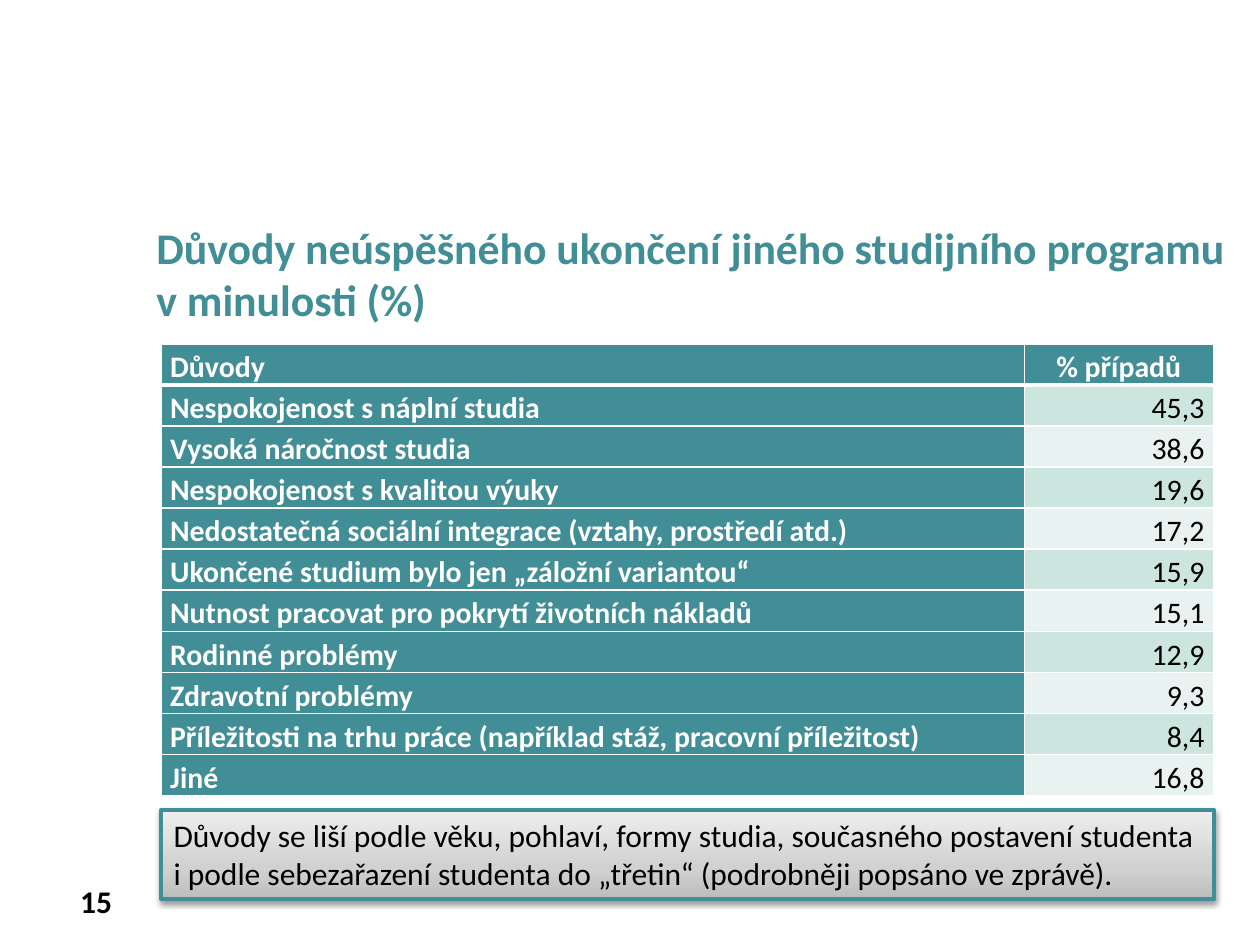
from dataclasses import dataclass

from lxml import etree
from pptx import Presentation
from pptx.dml.color import RGBColor
from pptx.enum.shapes import MSO_SHAPE
from pptx.enum.text import MSO_ANCHOR, MSO_AUTO_SIZE, PP_ALIGN
from pptx.oxml.ns import qn
from pptx.util import Cm, Pt

LEFT, CENTER, RIGHT = PP_ALIGN.LEFT, PP_ALIGN.CENTER, PP_ALIGN.RIGHT
TOP, MIDDLE = MSO_ANCHOR.TOP, MSO_ANCHOR.MIDDLE
FONT = "Calibri"
TEAL, WHITE, BLACK = "418E96", "FFFFFF", "000000"
BANDS = ("CDE5DF", "E8F2F0")
NOTE_GRADIENT = ((0, "BDBDBD"), (35, "D1D1D1"), (100, "EEEEEE"))
TITLE_ONLY_LAYOUT = 5
ROW_HEIGHT = Cm(0.82)


@dataclass
class Reason:
    label: str
    share: str


REASONS = [
    Reason("Nespokojenost s náplní studia", "45,3"),
    Reason("Vysoká náročnost studia", "38,6"),
    Reason("Nespokojenost s kvalitou výuky", "19,6"),
    Reason("Nedostatečná sociální integrace (vztahy, prostředí atd.)", "17,2"),
    Reason("Ukončené studium bylo jen „záložní variantou“", "15,9"),
    Reason("Nutnost pracovat pro pokrytí životních nákladů", "15,1"),
    Reason("Rodinné problémy", "12,9"),
    Reason("Zdravotní problémy", "9,3"),
    Reason("Příležitosti na trhu práce (například stáž, pracovní příležitost)", "8,4"),
    Reason("Jiné", "16,8"),
]


def color(value: str) -> RGBColor:
    return RGBColor.from_string(value)


def add_element(parent, tag: str, **attributes):
    return etree.SubElement(parent, qn(tag), {key: str(value) for key, value in attributes.items()})


def write_text(text_frame, text: str, size: float, text_color: str, bold: bool = False,
               alignment=LEFT, anchor=TOP):
    text_frame.word_wrap = True
    text_frame.vertical_anchor = anchor
    text_frame.text = text
    paragraph = text_frame.paragraphs[0]
    paragraph.alignment = alignment
    paragraph.font.name = FONT
    paragraph.font.size = Pt(size)
    paragraph.font.bold = bold
    paragraph.font.color.rgb = color(text_color)
    return paragraph


def set_borders(cell, top: float = 1, bottom: float = 1) -> None:
    properties = cell._tc.get_or_add_tcPr()
    for side, width in (("L", 1), ("R", 1), ("T", top), ("B", bottom)):
        line = add_element(properties, f"a:ln{side}", w=Pt(width))
        add_element(add_element(line, "a:solidFill"), "a:srgbClr", val=WHITE)


def fill_cell(cell, text: str, fill: str, text_color: str, bold: bool, alignment,
              anchor=MIDDLE, top: float = 1, bottom: float = 1):
    set_borders(cell, top, bottom)
    cell.fill.solid()
    cell.fill.fore_color.rgb = color(fill)
    cell.margin_left = cell.margin_right = Cm(0.18)
    cell.margin_top = cell.margin_bottom = 0
    paragraph = write_text(cell.text_frame, text, 17, text_color, bold, alignment)
    cell.vertical_anchor = anchor
    paragraph.line_spacing = 1.15
    return paragraph


def add_title(slide) -> None:
    title = slide.shapes.title
    title.left, title.top, title.width, title.height = Cm(2.9), Cm(4.32), Cm(22.3), Cm(1.4)
    write_text(title.text_frame,
               "Důvody neúspěšného ukončení jiného studijního programu v minulosti (%)",
               25, TEAL, bold=True)
    title.text_frame.auto_size = MSO_AUTO_SIZE.NONE


def add_reason_table(slide) -> None:
    row_count = len(REASONS) + 1
    table = slide.shapes.add_table(row_count, 2, Cm(3.25), Cm(6.93),
                                   Cm(21.21), ROW_HEIGHT * row_count).table
    table.columns[0].width, table.columns[1].width = Cm(17.4), Cm(3.81)
    for row in table.rows:
        row.height = ROW_HEIGHT

    # Header row
    headers = (("Důvody", LEFT, MIDDLE), ("% případů", CENTER, TOP))
    for column, (text, alignment, anchor) in enumerate(headers):
        paragraph = fill_cell(table.cell(0, column), text, TEAL, WHITE, True, alignment,
                              anchor, bottom=3)
        paragraph.space_after = Pt(2)

    # Reasons with alternating value shades
    for index, reason in enumerate(REASONS):
        top = 3 if index == 0 else 1
        fill_cell(table.cell(index + 1, 0), reason.label, TEAL, WHITE, True, LEFT, top=top)
        fill_cell(table.cell(index + 1, 1), reason.share, BANDS[index % 2], BLACK, False,
                  RIGHT, top=top)


def add_note(slide) -> None:
    note = slide.shapes.add_shape(MSO_SHAPE.RECTANGLE, Cm(3.25), Cm(16.33), Cm(21.23), Cm(1.8))
    note.line.color.rgb = color(TEAL)
    note.line.width = Pt(2.25)
    write_text(note.text_frame,
               "Důvody se liší podle věku, pohlaví, formy studia, současného postavení studenta "
               "i podle sebezařazení studenta do „třetin“ (podrobněji popsáno ve zprávě).",
               18, BLACK)
    note.text_frame.auto_size = MSO_AUTO_SIZE.SHAPE_TO_FIT_TEXT

    # Three-stop gradient, dark at the bottom
    note.fill.gradient()
    note.fill.gradient_angle = 90
    properties = note._element.spPr
    stops = properties.find(".//" + qn("a:gsLst"))
    for stop in list(stops):
        stops.remove(stop)
    for position, value in NOTE_GRADIENT:
        add_element(add_element(stops, "a:gs", pos=position * 1000), "a:srgbClr", val=value)

    # Soft shadow below
    note.shadow.inherit = False
    shadow = add_element(properties.find(qn("a:effectLst")), "a:outerShdw",
                         blurRad=Pt(3.1), dist=Pt(1.6), dir=90 * 60000, rotWithShape=0)
    add_element(add_element(shadow, "a:srgbClr", val=BLACK), "a:alpha", val=38000)


def add_page_number(slide) -> None:
    page_number = slide.shapes.add_textbox(Cm(0.71), Cm(17.65), Cm(1.8), Cm(1.02))
    write_text(page_number.text_frame, "15", 18, BLACK, bold=True, alignment=RIGHT)


def main() -> None:
    presentation = Presentation()
    presentation.slide_width, presentation.slide_height = Cm(25.4), Cm(19.05)
    slide = presentation.slides.add_slide(presentation.slide_layouts[TITLE_ONLY_LAYOUT])
    add_page_number(slide)
    add_title(slide)
    add_note(slide)
    add_reason_table(slide)
    presentation.save("out.pptx")


if __name__ == "__main__":
    main()
